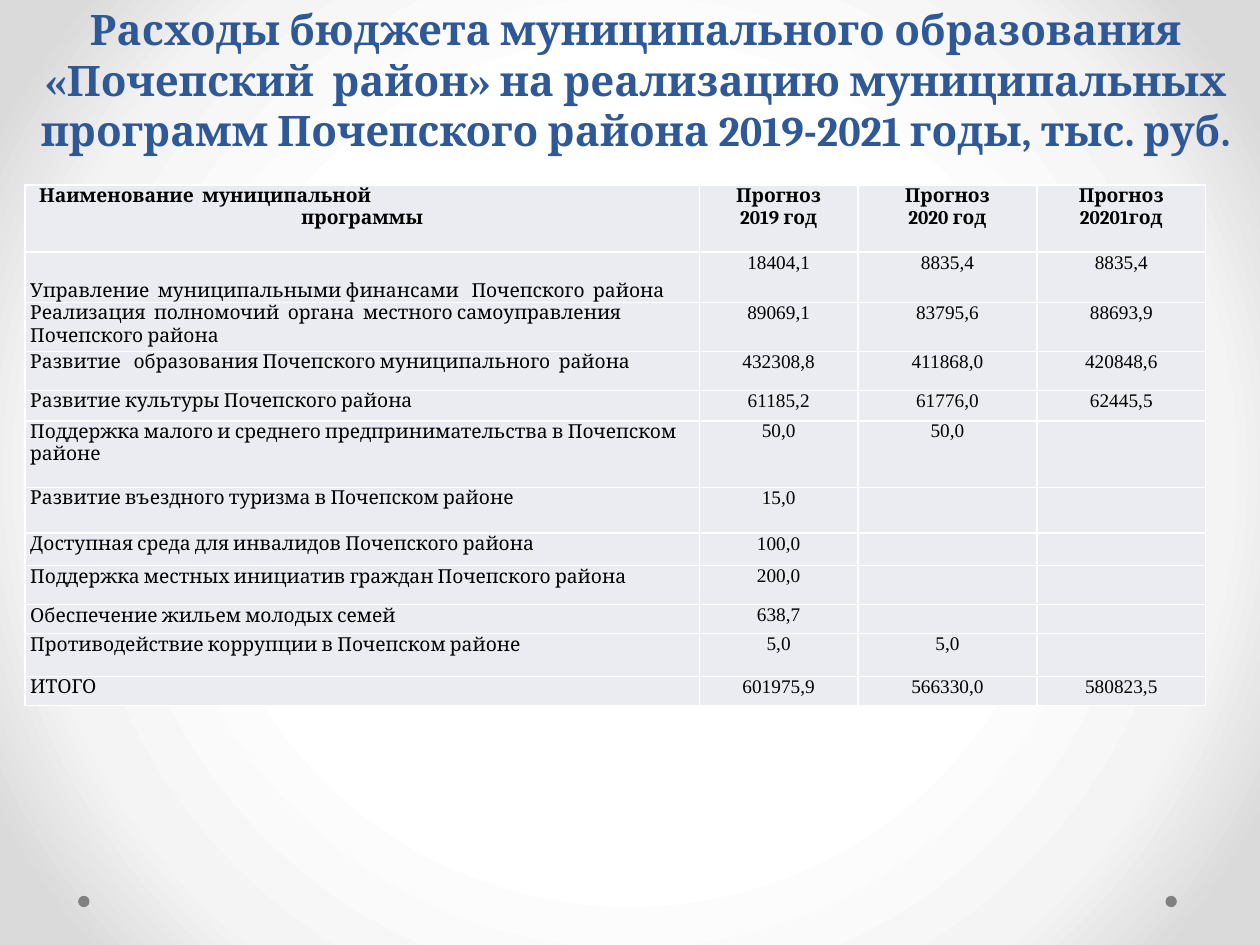
from dataclasses import dataclass

from lxml.etree import SubElement
from pptx import Presentation
from pptx.dml.color import RGBColor
from pptx.enum.shapes import MSO_SHAPE as Shape
from pptx.enum.text import MSO_ANCHOR as Anchor, PP_ALIGN as Align
from pptx.oxml.ns import qn
from pptx.util import Inches, Pt


@dataclass(frozen=True)
class Theme:
    font: str = "Cambria"
    number_font: str = "Times New Roman"
    title: str = "2F5897"
    text: str = "000000"
    cell: str = "EAECF2"
    border: str = "FFFFFF"
    dot: str = "808080"
    glow: tuple = ((50, "FFFFFF"), (76, "F4F4F4"), (92, "DADADA"))
    title_size: int = 24
    table_size: int = 11


THEME = Theme()

TITLE = ("Расходы бюджета муниципального образования «Почепский  район» "
         "на реализацию муниципальных программ Почепского района "
         "2019-2021 годы, тыс. руб.")
HEADER = ["Наименование  муниципальной\nпрограммы", "Прогноз\n2019 год",
          "Прогноз\n2020 год", "Прогноз\n20201год"]
# Row height, programme, forecast for each year
PROGRAMMES = [
    (0.4, "Управление  муниципальными финансами   Почепского  района",
     "18404,1", "8835,4", "8835,4"),
    (0.39, "Реализация  полномочий  органа  местного самоуправления Почепского района",
     "89069,1", "83795,6", "88693,9"),
    (0.31, "Развитие   образования Почепского муниципального  района",
     "432308,8", "411868,0", "420848,6"),
    (0.24, "Развитие культуры Почепского района", "61185,2", "61776,0", "62445,5"),
    (0.53, "Поддержка малого и среднего предпринимательства в Почепском районе",
     "50,0", "50,0", ""),
    (0.36, "Развитие въездного туризма в Почепском районе", "15,0", "", ""),
    (0.26, "Доступная среда для инвалидов Почепского района", "100,0", "", ""),
    (0.31, "Поддержка местных инициатив граждан Почепского района", "200,0", "", ""),
    (0.23, "Обеспечение жильем молодых семей", "638,7", "", ""),
    (0.34, "Противодействие коррупции в Почепском районе", "5,0", "5,0", ""),
    (0.23, "ИТОГО", "601975,9", "566330,0", "580823,5"),
]
HEADER_HEIGHT = 0.53
COLUMN_WIDTHS = [5.35, 1.26, 1.42, 1.34]


def write(tf, text, size=THEME.table_size, font=THEME.font, color=THEME.text,
          bold=False, align=Align.LEFT):
    """Fill a text frame, one paragraph for each line of text."""
    for i, line in enumerate(text.split("\n")):
        p = tf.add_paragraph() if i else tf.paragraphs[0]
        p.alignment = align
        if not line:
            SubElement(p._p, qn("a:endParaRPr"), sz=str(size * 100))
            continue
        r = p.add_run()
        r.text = line
        r.font.name, r.font.size, r.font.bold = font, Pt(size), bold
        r.font.color.rgb = RGBColor.from_string(color)


def add_background(slide):
    """Radial gradient, light in the middle."""
    slide.background.fill.gradient()
    grad = slide.background._cSld.find(".//" + qn("a:gradFill"))
    for child in list(grad):
        grad.remove(child)
    stops = SubElement(grad, qn("a:gsLst"))
    for position, color in THEME.glow:
        stop = SubElement(stops, qn("a:gs"), pos=str(position * 1000))
        SubElement(stop, qn("a:srgbClr"), val=color)
    circle = SubElement(grad, qn("a:path"), path="circle")
    SubElement(circle, qn("a:fillToRect"), dict.fromkeys("ltrb", "50000"))


def add_dots(slide, lefts, top, size):
    for left in lefts:
        sp = slide.shapes.add_shape(Shape.OVAL, left, top, size, size)
        sp.shadow.inherit = False
        sp.fill.solid()
        sp.fill.fore_color.rgb = RGBColor.from_string(THEME.dot)
        sp.line.fill.background()


def add_title(slide, left, top, width, height):
    sp = slide.shapes.title
    sp.left, sp.top, sp.width, sp.height = left, top, width, height
    tf = sp.text_frame
    tf.word_wrap = True
    tf.vertical_anchor = Anchor.BOTTOM
    write(tf, TITLE, size=THEME.title_size, color=THEME.title, bold=True,
          align=Align.CENTER)


def style_cell(cell):
    cell.margin_left = cell.margin_right = Inches(0.04)
    cell.margin_top = cell.margin_bottom = 0
    props = cell._tc.get_or_add_tcPr()
    for side in ("lnL", "lnR", "lnT", "lnB"):
        ln = SubElement(props, qn(f"a:{side}"), w=str(Pt(1)))
        fill = SubElement(ln, qn("a:solidFill"))
        SubElement(fill, qn("a:srgbClr"), val=THEME.border)
    cell.fill.solid()
    cell.fill.fore_color.rgb = RGBColor.from_string(THEME.cell)


def add_budget_table(slide, left, top):
    heights = [HEADER_HEIGHT] + [row[0] for row in PROGRAMMES]
    rows = [HEADER] + [row[1:] for row in PROGRAMMES]
    table = slide.shapes.add_table(
        len(rows), len(COLUMN_WIDTHS), left, top,
        Inches(sum(COLUMN_WIDTHS)), Inches(sum(heights))).table
    for column, width in zip(table.columns, COLUMN_WIDTHS):
        column.width = Inches(width)
    for i, (values, height) in enumerate(zip(rows, heights)):
        table.rows[i].height = Inches(height)
        for j, value in enumerate(values):
            cell = table.cell(i, j)
            style_cell(cell)
            write(cell.text_frame, value, bold=i == 0,
                  font=THEME.number_font if i and j else THEME.font,
                  align=Align.CENTER if j else Align.LEFT)
    first, second = table.cell(0, 0).text_frame.paragraphs
    first._p.get_or_add_pPr().set("marL", str(Inches(0.07)))
    second.alignment = Align.CENTER
    table.cell(1, 0).vertical_anchor = Anchor.BOTTOM


def main():
    prs = Presentation()
    prs.slide_width, prs.slide_height = Inches(10), Inches(7.5)
    slide = prs.slides.add_slide(prs.slide_layouts[5])
    add_background(slide)
    add_dots(slide, (Inches(0.62), Inches(9.25)), Inches(7.11), Inches(0.09))
    add_budget_table(slide, Inches(0.2), Inches(1.47))
    add_title(slide, Inches(0.2), Inches(0.76), Inches(9.69), Inches(0.52))
    prs.save("out.pptx")


if __name__ == "__main__":
    main()
